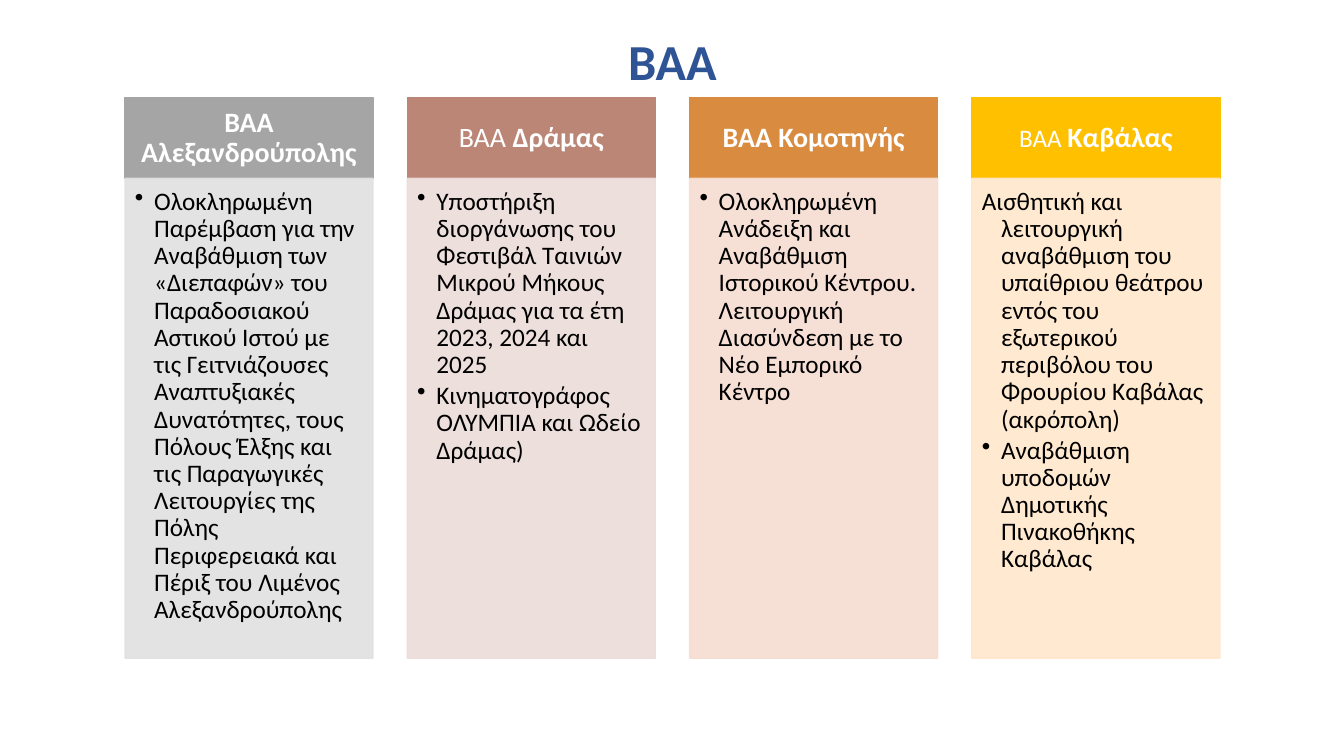
from lxml.etree import SubElement
from pptx import Presentation
from pptx.dml.color import RGBColor
from pptx.enum.shapes import MSO_SHAPE
from pptx.enum.text import MSO_ANCHOR, PP_ALIGN
from pptx.oxml.ns import qn
from pptx.util import Inches, Pt

COLORS = {
    "title": "2F5496", "white": "FFFFFF", "black": "000000",
    "head": ["A5A5A5", "BB8676", "D98B3F", "FFC000"],
    "body": ["E1E1E1", "ECDCD9", "F6DDD1", "FFE7CB"],
}

# Grid in inches: four equal columns, a head row and a body row
LEFT, STEP, WIDE = 1.24, 2.8, 2.46
HEAD, BODY = (0.97, 0.8), (1.77, 4.76)

# Each city: head runs (text, size, bold), then items (text, bullet)
CITIES = [
    ([("ΒΑΑ Αλεξανδρούπολης", 20, True)],
     [("Ολοκληρωμένη Παρέμβαση για την Αναβάθμιση των «Διεπαφών» του "
       "Παραδοσιακού Αστικού Ιστού με τις Γειτνιάζουσες Αναπτυξιακές "
       "Δυνατότητες, τους Πόλους Έλξης και τις Παραγωγικές Λειτουργίες της "
       "Πόλης Περιφερειακά και Πέριξ του Λιμένος Αλεξανδρούπολης", True)]),
    ([("ΒΑΑ ", 20, False), ("Δράμας", 20, True)],
     [("Υποστήριξη διοργάνωσης του Φεστιβάλ Ταινιών Μικρού Μήκους Δράμας "
       "για τα έτη 2023, 2024 και 2025", True),
      ("Κινηματογράφος ΟΛΥΜΠΙΑ και Ωδείο Δράμας)", True)]),
    ([("ΒΑΑ Κομοτηνής", 20, True)],
     [("Ολοκληρωμένη Ανάδειξη και Αναβάθμιση Ιστορικού Κέντρου. Λειτουργική "
       "Διασύνδεση με το Νέο Εμπορικό Κέντρο", True)]),
    ([("ΒΑΑ ", 18, False), ("Καβάλας", 20, True)],
     [("Αισθητική και λειτουργική αναβάθμιση του υπαίθριου θεάτρου εντός του "
       "εξωτερικού περιβόλου του Φρουρίου Καβάλας (ακρόπολη)", False),
      ("Αναβάθμιση υποδομών Δημοτικής Πινακοθήκης Καβάλας", True)]),
]


def style(run, size, color, bold=False):
    run.font.name = "Calibri"
    run.font.size = Pt(size)
    run.font.bold = bold
    run.font.color.rgb = RGBColor.from_string(color)


def setup(frame, anchor, pads):
    frame.word_wrap = True
    frame.vertical_anchor = anchor
    (frame.margin_left, frame.margin_top,
     frame.margin_right, frame.margin_bottom) = map(Inches, pads)


def add_box(slide, col, row, color, alpha=100):
    top, tall = row
    box = slide.shapes.add_shape(
        MSO_SHAPE.RECTANGLE, Inches(LEFT + col * STEP), Inches(top),
        Inches(WIDE), Inches(tall))
    box.shadow.inherit = False
    box.fill.solid()
    box.line.width = Pt(1)
    for paint in (box.fill.fore_color, box.line.color):
        paint.rgb = RGBColor.from_string(color)
    if alpha < 100:
        for tint in box._element.spPr.iter(qn("a:srgbClr")):
            SubElement(tint, qn("a:alpha"), val=str(alpha * 1000))
    return box


def add_line(para, parts, color, align):
    para.alignment = align
    para.line_spacing = 0.9
    for text, size, bold in parts:
        run = para.add_run()
        run.text = text
        style(run, size, color, bold)


def add_head(slide, col, parts):
    frame = add_box(slide, col, HEAD, COLORS["head"][col]).text_frame
    setup(frame, MSO_ANCHOR.MIDDLE, (0.16, 0.09, 0.16, 0.09))
    add_line(frame.paragraphs[0], parts, COLORS["white"], PP_ALIGN.CENTER)


def add_body(slide, col, items):
    frame = add_box(slide, col, BODY, COLORS["body"][col], 90).text_frame
    setup(frame, MSO_ANCHOR.TOP, (0.1, 0.1, 0.14, 0.16))
    for i, (text, dot) in enumerate(items):
        para = frame.add_paragraph() if i else frame.paragraphs[0]
        para.level = 1
        para.space_after = Pt(2.7)
        add_line(para, [(text, 18, False)], COLORS["black"], PP_ALIGN.LEFT)
        # Hanging indent, with or without a bullet
        props = para._p.get_or_add_pPr()
        props.set("marL", str(Inches(0.19)))
        props.set("indent", str(Inches(-0.19)))
        if dot:
            SubElement(props, qn("a:buChar"), char="•")
        else:
            SubElement(props, qn("a:buNone"))


def add_title(slide, text):
    box = slide.shapes.add_textbox(
        Inches(0.92), Inches(0.4), Inches(11.5), Inches(0.48))
    setup(box.text_frame, MSO_ANCHOR.MIDDLE, (0.1, 0.05, 0.1, 0.05))
    add_line(box.text_frame.paragraphs[0], [(text, 36, True)],
             COLORS["title"], PP_ALIGN.CENTER)


def main():
    deck = Presentation()
    deck.slide_width, deck.slide_height = Inches(13.33), Inches(7.5)
    slide = deck.slides.add_slide(deck.slide_layouts[6])
    add_title(slide, "ΒΑΑ")
    for col, (head, items) in enumerate(CITIES):
        add_head(slide, col, head)
        add_body(slide, col, items)
    deck.save("out.pptx")


if __name__ == "__main__":
    main()
